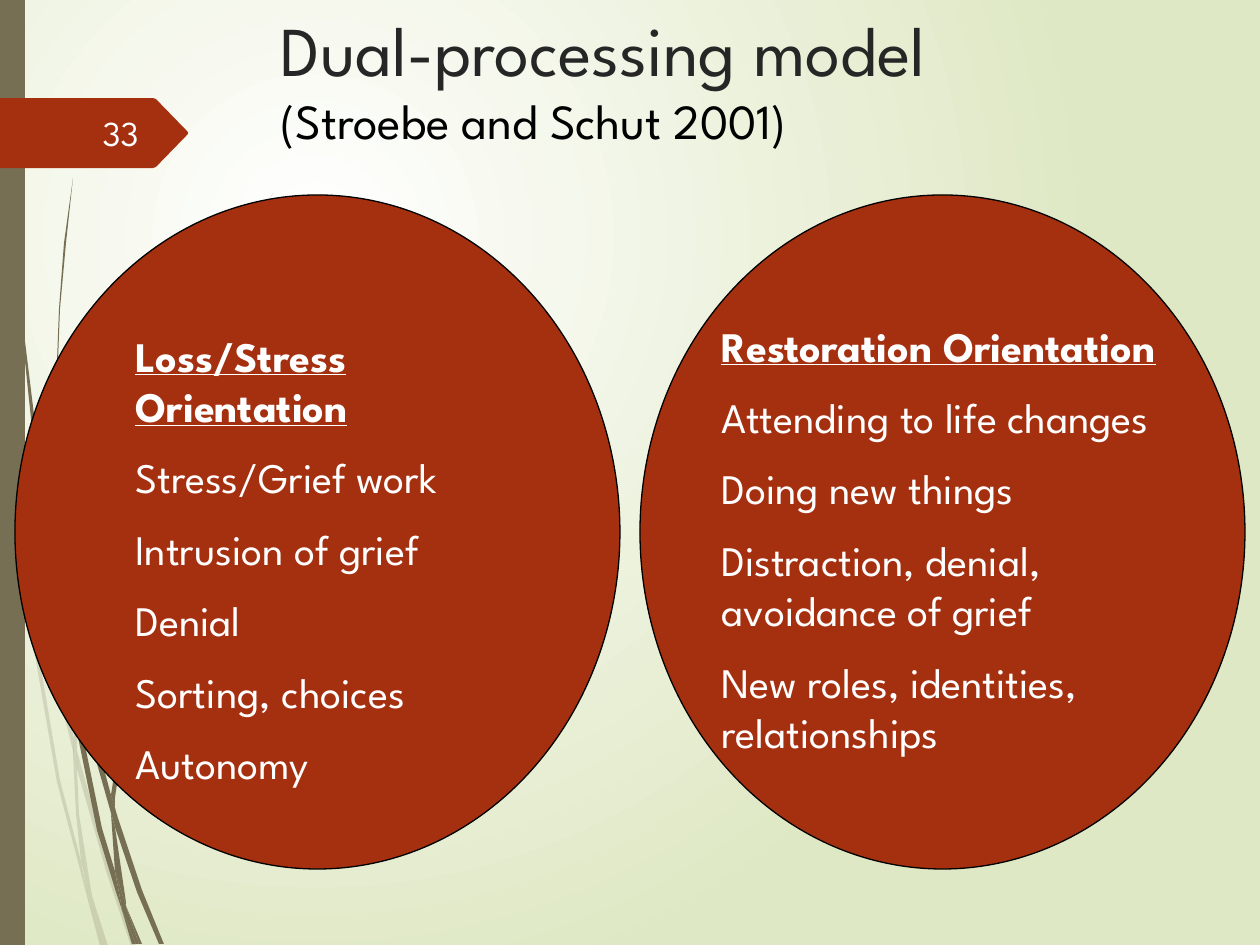
import lxml.etree
import pptx
import pptx.dml.color
import pptx.enum.shapes
import pptx.enum.text
import pptx.oxml
import pptx.oxml.ns
import pptx.util

SCALE = 914400 / 126
FONT = "League Spartan"
RUST = pptx.dml.color.RGBColor(0xA5, 0x30, 0x10)
OLIVE = pptx.dml.color.RGBColor(0x76, 0x6F, 0x54)
WHITE = pptx.dml.color.RGBColor(0xFF, 0xFF, 0xFF)
OFF_WHITE = pptx.dml.color.RGBColor(0xFE, 0xFF, 0xFF)
SAGE = pptx.dml.color.RGBColor(0xDF, 0xE8, 0xC4)
CHARCOAL = pptx.dml.color.RGBColor(0x26, 0x26, 0x26)
BLACK = pptx.dml.color.RGBColor(0, 0, 0)

PALE_BLADES = [
    [(10, 441), (8, 406), (0, 355), (0, 377), (9, 433)],
    [(50, 658), (74, 755), (74, 738), (54, 655), (13, 435), (15, 474)],
    [(81, 765), (77, 751), (77, 769), (107, 874), (131, 946), (136, 946), (111, 872)],
    [(105, 946), (108, 946), (92, 896)],
    [(81, 861), (60, 780), (28, 591), (15, 474), (10, 441), (24, 592), (57, 782),
     (81, 873), (88, 900), (87, 891)],
    [(73, 755), (76, 814), (81, 861), (84, 872), (92, 896), (91, 890), (79, 814),
     (77, 769), (77, 766)],
    [(77, 736), (96, 582), (140, 440), (200, 309), (236, 249), (253, 221), (273, 194),
     (273, 193), (253, 221), (234, 248), (199, 307), (139, 438), (95, 581), (74, 736),
     (74, 738), (77, 751)],
    [(88, 900), (100, 946), (103, 946)],
    [(77, 766), (77, 769), (77, 751), (74, 738), (73, 755)],
    [(84, 872), (82, 861), (87, 891), (88, 900), (103, 946), (105, 946), (92, 896)],
]
DARK_BLADES = [
    [(6, 139), (18, 294), (34, 447), (58, 601), (59, 606), (57, 576), (57, 571),
     (38, 447), (19, 292), (8, 137), (5, 60), (4, 0), (3, 0), (4, 60)],
    [(92, 746), (111, 813), (111, 798), (111, 795), (97, 743), (63, 595), (67, 636)],
    [(118, 818), (115, 808), (115, 827), (137, 892), (159, 944), (164, 944), (142, 890)],
    [(115, 871), (102, 828), (76, 701), (67, 636), (59, 601), (71, 702), (97, 830),
     (116, 892), (122, 910), (121, 903)],
    [(63, 595), (60, 571), (55, 440), (60, 309), (66, 243), (73, 178), (64, 243),
     (59, 309), (54, 440), (57, 566), (62, 595)],
    [(139, 944), (142, 944), (126, 906)],
    [(59, 601), (67, 636), (63, 595), (62, 595), (57, 566), (57, 571)],
    [(115, 798), (130, 696), (165, 600), (213, 512), (241, 471), (256, 452), (272, 433),
     (271, 433), (256, 451), (241, 470), (212, 510), (163, 597), (127, 694), (111, 795),
     (115, 808)],
    [(122, 910), (132, 944), (136, 944)],
    [(111, 813), (115, 871), (121, 890), (126, 906), (126, 902), (115, 827), (113, 820)],
    [(111, 813), (113, 820), (115, 827), (115, 808), (111, 795), (111, 798)],
    [(121, 890), (115, 871), (121, 903), (122, 910), (136, 944), (139, 944), (126, 906)],
]
LOSS = ["Loss/Stress Orientation", "Stress/Grief work", "Intrusion of grief", "Denial",
        "Sorting, choices", "Autonomy"]
RESTORATION = ["Restoration Orientation", "Attending to life changes", "Doing new things",
               "Distraction, denial, avoidance of grief",
               "New roles, identities, relationships"]


def emu(*lengths):
    """Turn px lengths into EMU."""
    return [pptx.util.Emu(round(length * SCALE)) for length in lengths]


def paint(shape, color):
    """Give a shape a flat fill without line or shadow."""
    shape.shadow.inherit = False
    shape.fill.solid()
    shape.fill.fore_color.rgb = color
    shape.line.fill.background()


def style(span, size, color, strong=False):
    """Format one run; strong means bold and underlined."""
    span.font.name = FONT
    span.font.size = pptx.util.Pt(size)
    span.font.color.rgb = color
    span.font.bold = span.font.underline = strong


def add_background(page):
    """Fill the page with a radial gradient."""
    fill = page.background.fill
    fill.gradient()
    for stop, color, position in zip(fill.gradient_stops, (WHITE, SAGE), (0, 1)):
        stop.color.rgb = color
        stop.position = position
    gradient = page.background._cSld.bg.bgPr.find(pptx.oxml.ns.qn("a:gradFill"))
    gradient.remove(gradient.find(pptx.oxml.ns.qn("a:lin")))
    gradient.append(pptx.oxml.parse_xml(
        f'<a:path {pptx.oxml.ns.nsdecls("a")} path="circle">'
        '<a:fillToRect l="50000" t="50000" r="100000" b="100000"/></a:path>'))


def add_outline(page, left, top, points, color, opacity=100):
    """Draw a closed outline from points relative to left and top."""
    corners = [(left + x, top + y) for x, y in points]
    builder = page.shapes.build_freeform(*corners[0], scale=SCALE)
    builder.add_line_segments(corners[1:], close=True)
    shape = builder.convert_to_shape()
    paint(shape, color)
    if opacity < 100:
        tint = shape._element.spPr.find(".//" + pptx.oxml.ns.qn("a:srgbClr"))
        alpha = lxml.etree.SubElement(tint, pptx.oxml.ns.qn("a:alpha"))
        alpha.set("val", str(opacity * 1000))


def add_grass(page, left, top, height):
    """Draw the grass blades and the side band."""
    for blades, opacity in ((PALE_BLADES, 20), (DARK_BLADES, 100)):
        for blade in blades:
            add_outline(page, left, top, blade, OLIVE, opacity)
    band = page.shapes.add_shape(
        pptx.enum.shapes.MSO_SHAPE.RECTANGLE, *emu(left, top, 25, height))
    paint(band, OLIVE)


def add_badge(page, left, top, width, height, number):
    """Draw the arrow-shaped badge with the page number."""
    middle = height // 2
    points = [(0, 0), (width - 35, 0), (width - 32, 1), (width, middle - 1),
              (width, middle + 1), (width - 32, height - 1), (width - 35, height),
              (0, height)]
    add_outline(page, left, top, points, RUST)
    box = page.shapes.add_textbox(*emu(left + 71, top + 10, 80, 50))
    frame = box.text_frame
    frame.word_wrap = True
    frame.vertical_anchor = pptx.enum.text.MSO_ANCHOR.MIDDLE
    frame.text = number
    para = frame.paragraphs[0]
    para.alignment = pptx.enum.text.PP_ALIGN.RIGHT
    style(para.runs[0], 20, OFF_WHITE)


def add_title(page, left, top, width, height, heading, citation):
    """Place the title with its citation on a second line."""
    title = page.shapes.title
    title.left, title.top, title.width, title.height = emu(left, top, width, height)
    frame = title.text_frame
    frame.word_wrap = True
    frame.auto_size = pptx.enum.text.MSO_AUTO_SIZE.NONE
    frame.vertical_anchor = pptx.enum.text.MSO_ANCHOR.TOP
    para = frame.paragraphs[0]
    para.text = f"{heading}\v{citation}"
    para.alignment = pptx.enum.text.PP_ALIGN.LEFT
    style(para.runs[0], 40, CHARCOAL)
    style(para.runs[1], 28, BLACK)


def add_orientation(page, left, top, width, height, text_box, lines):
    """Draw one circle with its underlined heading and list."""
    circle = page.shapes.add_shape(
        pptx.enum.shapes.MSO_SHAPE.OVAL, *emu(left, top, width, height))
    paint(circle, RUST)
    circle.line.color.rgb = BLACK
    circle.line.width = pptx.util.Pt(0.75)
    x, y, text_width, text_height = text_box
    box = page.shapes.add_textbox(*emu(left + x, top + y, text_width, text_height))
    frame = box.text_frame
    frame.word_wrap = True
    frame.text = "\n".join(lines)
    for index, para in enumerate(frame.paragraphs):
        para.space_before = pptx.util.Pt(12)
        style(para.runs[0], 24, WHITE, strong=index == 0)


def main():
    """Build the slide and save it."""
    deck = pptx.Presentation()
    deck.slide_width, deck.slide_height = emu(1260, 945)
    page = deck.slides.add_slide(deck.slide_layouts[5])
    add_background(page)
    add_grass(page, 0, 0, 945)
    add_badge(page, 0, 98, 188, 70, "33")
    add_title(page, 268, 0, 908, 262, "Dual-processing model", "(Stroebe and Schut 2001)")
    add_orientation(page, 15, 195, 605, 674, (108, 129, 427, 649), LOSS)
    add_orientation(page, 640, 195, 605, 674, (69, 119, 525, 522), RESTORATION)
    deck.save("out.pptx")


if __name__ == "__main__":
    main()
